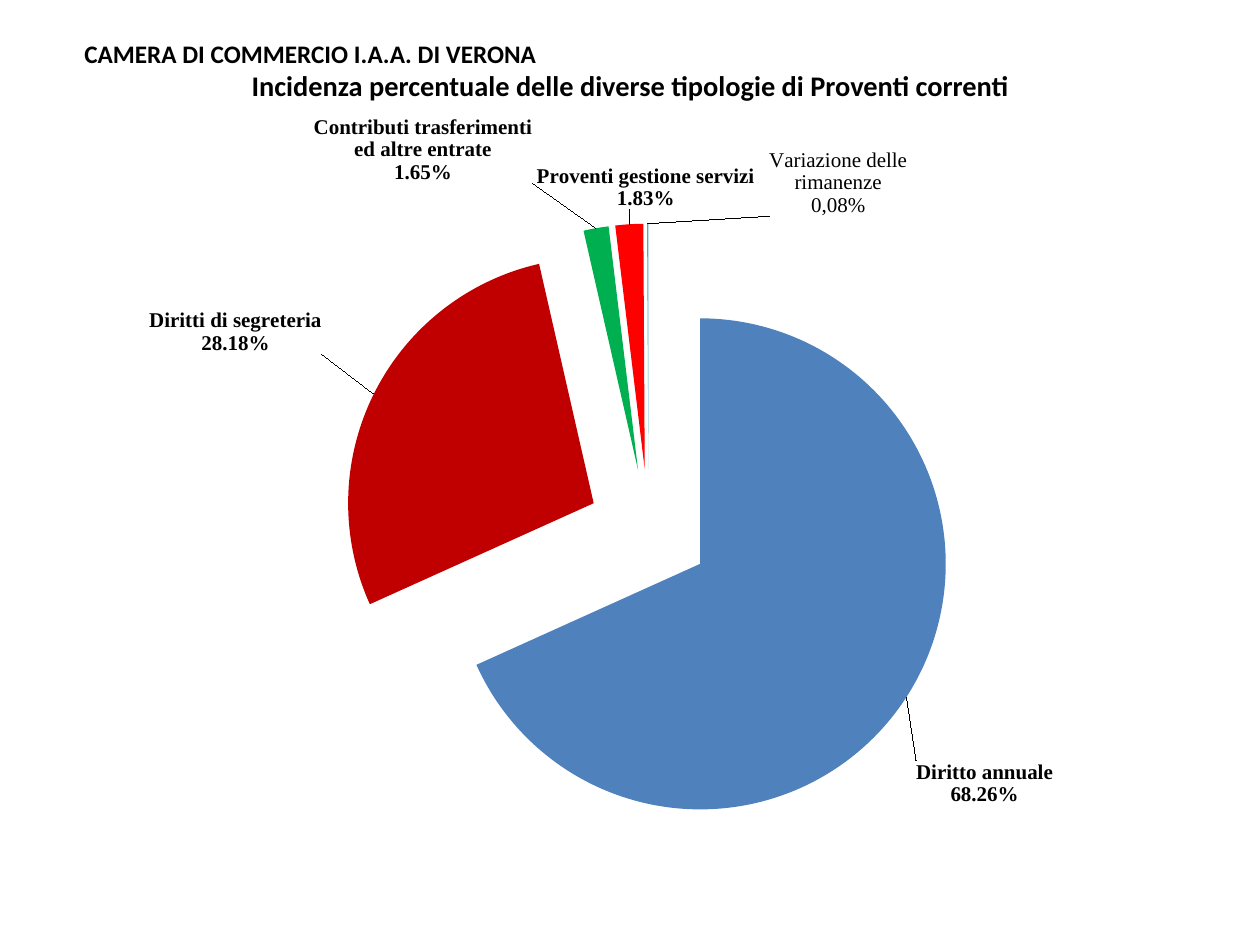
import pptx
import pptx.util
import pptx.chart.data
import pptx.dml.color
import pptx.enum.chart
import pptx.enum.text
import pptx.oxml
import pptx.oxml.ns

Inches = pptx.util.Inches
Pt = pptx.util.Pt
qn = pptx.oxml.ns.qn
NAMESPACE = pptx.oxml.ns.nsdecls("c")

SLICES = [
    ("Diritto annuale", 0.6826, "4F81BD", (0.003, 0.082), None),
    ("Diritti di segreteria", 0.2818, "C00000", (-0.04, -0.05), None),
    ("Contributi trasferimenti ed altre entrate", 0.0165, "00B050", (-0.055, -0.052), None),
    ("Proventi gestione servizi", 0.0183, "FF0000", (0.015, -0.01), None),
    ("Variazione delle rimanenze", 0.0009, "4BACC6", (0.168, 0),
     ["Variazione delle rimanenze", "0,08%"]),
]
HEADINGS = [
    ("CAMERA DI COMMERCIO I.A.A. DI VERONA", 14.4, pptx.enum.text.PP_ALIGN.LEFT),
    ("Incidenza percentuale delle diverse tipologie di Proventi correnti", 16.2,
     pptx.enum.text.PP_ALIGN.CENTER),
]


def color(value):
    return pptx.dml.color.RGBColor.from_string(value)


def style_font(font, name, size, bold):
    font.name = name
    font.size = Pt(size)
    font.bold = bold
    font.color.rgb = color("000000")


def add_heading(page, left, top, width, height):
    box = page.shapes.add_textbox(Inches(left), Inches(top), Inches(width), Inches(height))
    frame = box.text_frame
    frame.word_wrap = True
    frame.vertical_anchor = pptx.enum.text.MSO_ANCHOR.MIDDLE
    frame.margin_left = frame.margin_right = Inches(0.17)
    frame.margin_top = frame.margin_bottom = 0
    for index, (text, size, alignment) in enumerate(HEADINGS):
        para = frame.paragraphs[0] if index == 0 else frame.add_paragraph()
        para.alignment = alignment
        span = para.add_run()
        span.text = text
        style_font(span.font, "Calibri", size, True)


def manual_layout(x, y, extra=""):
    return pptx.oxml.parse_xml(
        f'<c:layout {NAMESPACE}><c:manualLayout>{extra}'
        f'<c:x val="{x}"/><c:y val="{y}"/></c:manualLayout></c:layout>'
    )


def place_plot(chart, x, y, width, height):
    layout = manual_layout(
        x, y,
        '<c:layoutTarget val="inner"/><c:xMode val="edge"/><c:yMode val="edge"/>',
    )
    for side, value in (("w", width), ("h", height)):
        layout[0].append(pptx.oxml.parse_xml(f'<c:{side} {NAMESPACE} val="{value}"/>'))
    plot_area = chart._chartSpace.chart.plotArea
    for existing in plot_area.findall(qn("c:layout")):
        plot_area.remove(existing)
    plot_area.insert(0, layout)


def label_slice(point, index, offset, lines):
    label = point.data_label
    if lines:
        frame = label.text_frame
        for number, line in enumerate(lines):
            para = frame.paragraphs[0] if number == 0 else frame.add_paragraph()
            span = para.add_run()
            span.text = line
            style_font(span.font, "Times New Roman", 12, False)
    else:
        style_font(label.font, "Times New Roman", 12, True)
    label.position = pptx.enum.chart.XL_LABEL_POSITION.OUTSIDE_END
    element = point._ser.find(qn("c:dLbls")).findall(qn("c:dLbl"))[index]
    for existing in element.findall(qn("c:layout")):
        element.remove(existing)
    element.insert(1, manual_layout(*offset))
    if not lines:
        element.insert(2, pptx.oxml.parse_xml(
            f'<c:numFmt {NAMESPACE} formatCode="0.00%" sourceLinked="0"/>'))
    element.find(qn("c:showCatName")).set("val", "1")
    element.append(pptx.oxml.parse_xml(f'<c:separator {NAMESPACE}>\n</c:separator>'))


def add_income_pie(page, left, top, width, height):
    data = pptx.chart.data.CategoryChartData(number_format="0.00%")
    data.categories = [entry[0] for entry in SLICES]
    data.add_series("Series 1", [entry[1] for entry in SLICES])
    chart = page.shapes.add_chart(
        pptx.enum.chart.XL_CHART_TYPE.PIE,
        Inches(left), Inches(top), Inches(width), Inches(height), data,
    ).chart
    chart.has_legend = False
    chart.has_title = False
    style_font(chart.font, "Calibri", 10, False)
    place_plot(chart, 0.087, 0.148, 0.859, 0.843)
    chart.plots[0].vary_by_categories = True
    series = chart.plots[0].series[0]
    series.format.fill.solid()
    series._element.find(qn("c:spPr")).addnext(
        pptx.oxml.parse_xml(f'<c:explosion {NAMESPACE} val="25"/>'))
    labels = series.data_labels
    labels.show_value = labels.show_category_name = True
    labels.number_format = "0.00%"
    labels.number_format_is_linked = False
    style_font(labels.font, "Times New Roman", 12, True)
    for index, (_, _, fill, offset, lines) in enumerate(SLICES):
        point = series.points[index]
        point.format.fill.solid()
        point.format.fill.fore_color.rgb = color(fill)
        point._element.get_or_add_dPt_for_point(index).find(qn("c:spPr")).addprevious(
            pptx.oxml.parse_xml(f'<c:explosion {NAMESPACE} val="25"/>'))
        label_slice(point, index, offset, lines)


def main():
    deck = pptx.Presentation()
    deck.slide_width = Inches(10)
    deck.slide_height = Inches(7.5)
    page = deck.slides.add_slide(deck.slide_layouts[6])
    add_heading(page, 0.5, 0.36, 9, 0.39)
    add_income_pie(page, 0.5, 0.92, 9, 5.78)
    deck.save("out.pptx")


if __name__ == "__main__":
    main()
